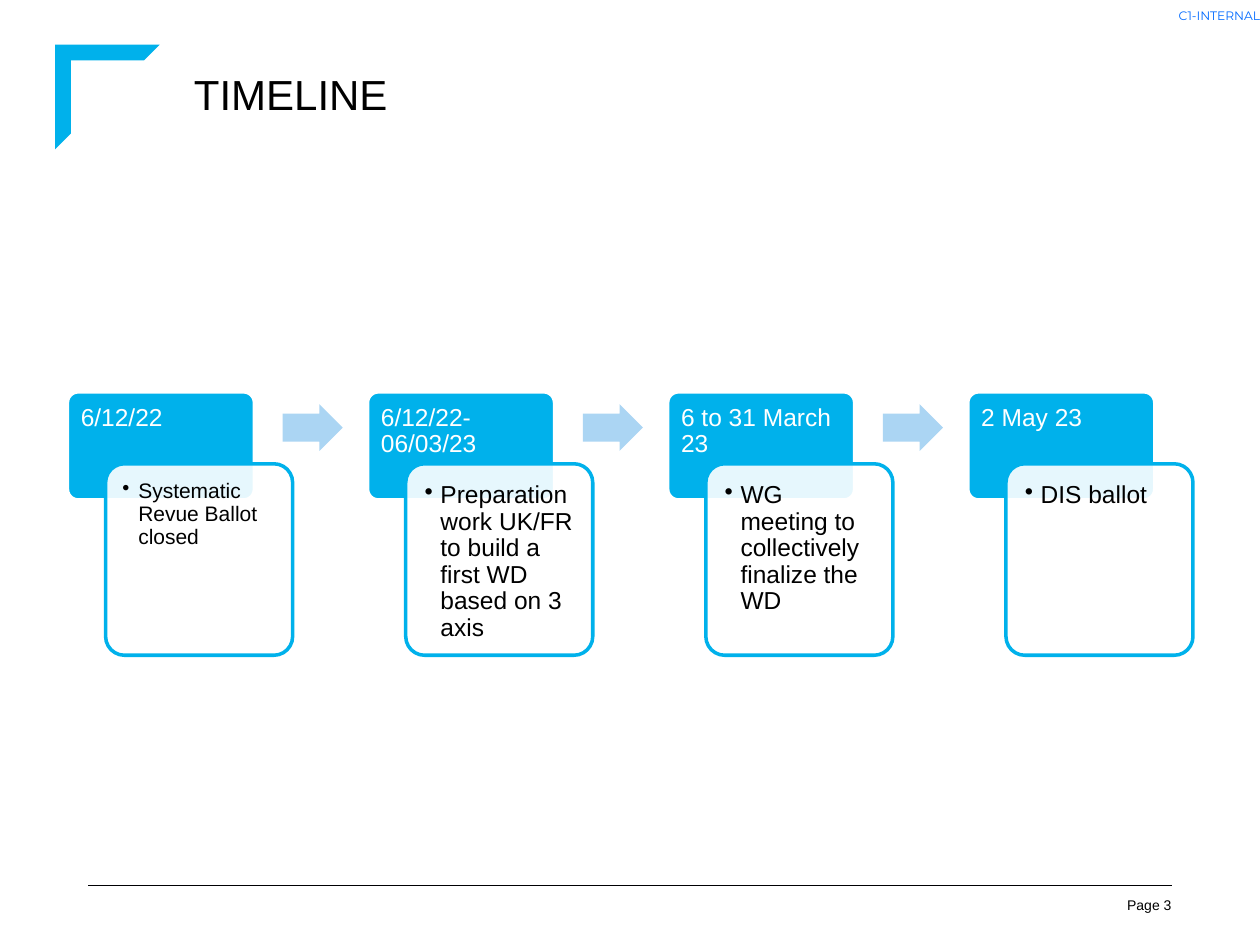
import pptx
import pptx.util
import pptx.dml.color
import pptx.enum.shapes
import pptx.enum.text
import pptx.oxml.ns
import lxml.etree

Cm = pptx.util.Cm
Pt = pptx.util.Pt
SHAPES = pptx.enum.shapes.MSO_SHAPE
ALIGN = pptx.enum.text.PP_ALIGN
ANCHOR = pptx.enum.text.MSO_ANCHOR
qn = pptx.oxml.ns.qn

BLUE = "00B1EB"
PALE_BLUE = "ABD5F3"
WHITE = "FFFFFF"
BLACK = "000000"


def color(value):
    return pptx.dml.color.RGBColor.from_string(value)


def add_text(text, box, size, text_color, margins, font="Arial", align=ALIGN.LEFT, wrap=True):
    shape = slide.shapes.add_textbox(*[Cm(length) for length in box])
    frame = shape.text_frame
    frame.word_wrap = wrap
    frame.margin_left, frame.margin_top, frame.margin_right, frame.margin_bottom = [
        Cm(margin) for margin in margins
    ]
    frame.text = text
    paragraph = frame.paragraphs[0]
    paragraph.alignment = align
    run_font = paragraph.runs[0].font
    run_font.name = font
    run_font.size = Pt(size)
    run_font.color.rgb = color(text_color)
    return shape


presentation = pptx.Presentation()
presentation.slide_width = Cm(25.4)
presentation.slide_height = Cm(19.05)
slide = presentation.slides.add_slide(presentation.slide_layouts[6])

footer_line = slide.shapes.add_connector(
    pptx.enum.shapes.MSO_CONNECTOR.STRAIGHT, Cm(1.78), Cm(17.85), Cm(23.62), Cm(17.85)
)
footer_line.line.color.rgb = color("000003")
footer_line.line.width = Pt(0.25)
lxml.etree.SubElement(footer_line._element.spPr, qn("a:effectLst"))

corner_points = [(3.22, 0.9), (1.11, 0.9), (1.11, 3.01), (1.43, 2.69), (1.43, 1.22), (2.9, 1.22)]
corner_points = [(Cm(x), Cm(y)) for x, y in corner_points]
builder = slide.shapes.build_freeform(*corner_points[0])
builder.add_line_segments(corner_points[1:], close=True)
corner = builder.convert_to_shape()
corner.shadow.inherit = False
corner.fill.solid()
corner.fill.fore_color.rgb = color(BLUE)
corner.line.fill.background()

no_margins = (0, 0, 0, 0)
add_text("Page 3", (22.53, 18.08, 1.09, 0.34), 8, BLACK, no_margins, align=ALIGN.RIGHT, wrap=False)
label = add_text("C1-INTERNAL", (22.91, 0, 2.49, 0.63), 7, "006AFF", no_margins, "Montserrat", ALIGN.RIGHT)
label.text_frame.vertical_anchor = ANCHOR.MIDDLE
add_text("TIMELINE", (3.66, 1.25, 16.79, 1.27), 24, BLACK, (0.25, 0.13, 0.25, 0.13))

steps = [
    ("6/12/22", "Systematic Revue Ballot closed", 12, 0.23),
    ("6/12/22-06/03/23", "Preparation work UK/FR to build a first WD based on 3 axis", 14, 0.27),
    ("6 to 31 March 23", "WG meeting to collectively finalize the WD", 14, 0.27),
    ("2 May 23", "DIS ballot", 14, 0.27),
]
pitch = 6.05

for index, (date, detail, detail_size, margin) in enumerate(steps):
    left = 1.36 + index * pitch
    blocks = [
        (SHAPES.ROUNDED_RECTANGLE, (left, 7.9, 3.77, 2.18), [0.1], BLUE, WHITE),
        (SHAPES.ROUNDED_RECTANGLE, (left + 0.77, 9.35, 3.77, 3.86), [0.1], WHITE, BLUE),
    ]
    if index < len(steps) - 1:
        blocks.append((SHAPES.RIGHT_ARROW, (left + 4.34, 8.15, 1.21, 0.94), [0.6, 0.5], PALE_BLUE, None))

    for kind, box, adjustments, fill, outline in blocks:
        shape = slide.shapes.add_shape(kind, *[Cm(length) for length in box])
        shape.shadow.inherit = False
        for position, adjustment in enumerate(adjustments):
            shape.adjustments[position] = adjustment
        shape.fill.solid()
        shape.fill.fore_color.rgb = color(fill)
        if outline:
            shape.line.color.rgb = color(outline)
            shape.line.width = Pt(2)
        else:
            shape.line.fill.background()
        if fill == WHITE:
            fill_color = shape._element.spPr.find(qn("a:solidFill"))[0]
            lxml.etree.SubElement(fill_color, qn("a:alpha"), val="90000")

    date_box = add_text(date, (left, 7.9, 3.77, 1.45), 14, WHITE, (0.27, 0.27, 0.27, 0.15))
    date_box.text_frame.paragraphs[0].line_spacing = 0.9

    detail_box = add_text(detail, (left + 0.88, 9.46, 3.55, 3.64), detail_size, BLACK, [margin] * 4)
    paragraph = detail_box.text_frame.paragraphs[0]
    paragraph.line_spacing = 0.9
    properties = paragraph._p.get_or_add_pPr()
    properties.set("marL", str(Cm(0.32)))
    properties.set("indent", str(-Cm(0.32)))
    lxml.etree.SubElement(properties, qn("a:buChar"), char="•")

presentation.save("out.pptx")
